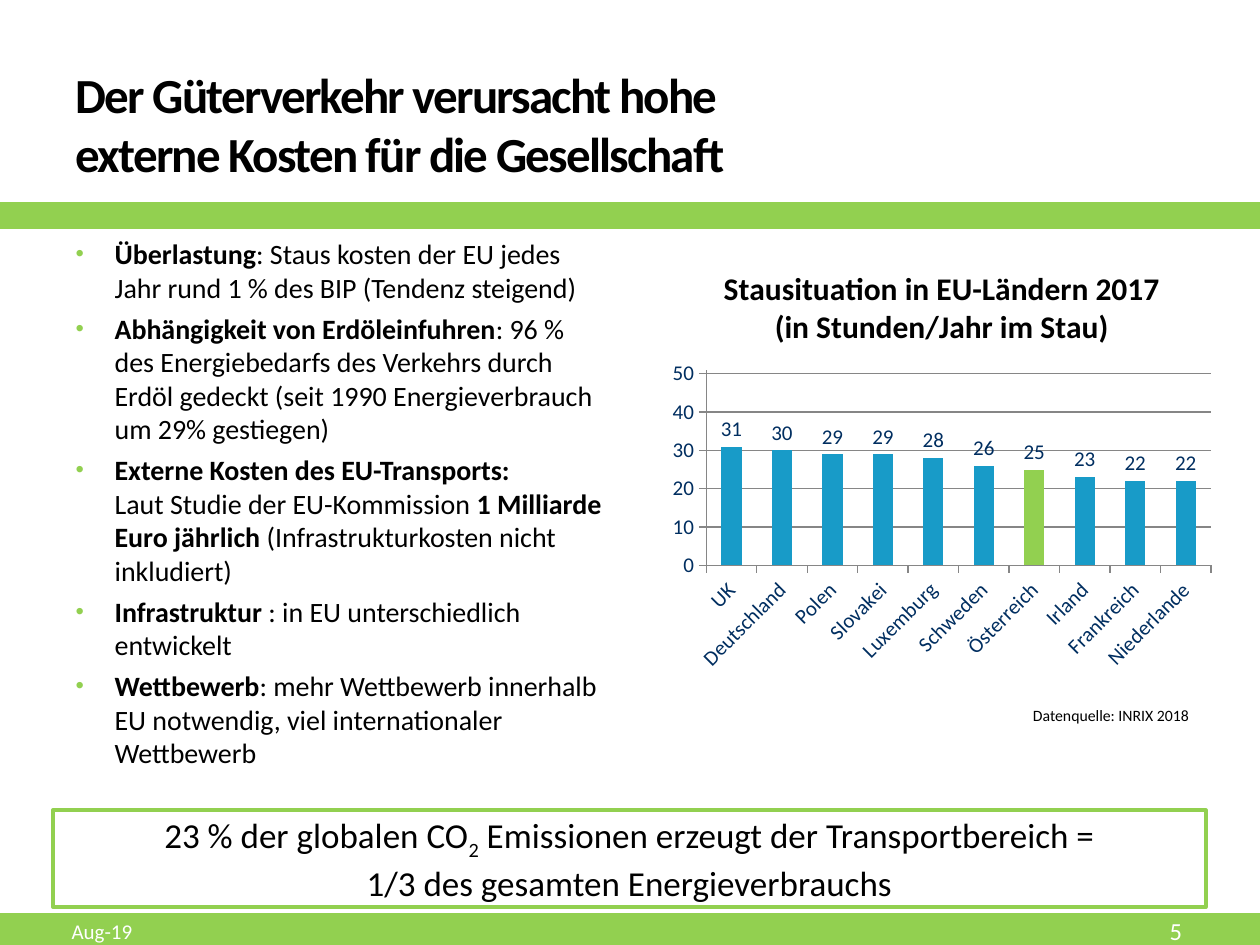
import pptx
import pptx.chart.data
import pptx.dml.color
import pptx.enum.chart
import pptx.enum.shapes
import pptx.enum.text
import pptx.oxml
import pptx.oxml.ns
import pptx.util
from lxml import etree
from pptx.util import Inches

COLORS = {"green": "92D050", "blue": "189BC8", "navy": "002E60",
          "black": "000000", "white": "FFFFFF", "grid": "868686"}
FONT = "Calibri"
ALIGN = pptx.enum.text.PP_ALIGN
ANCHOR = pptx.enum.text.MSO_ANCHOR

BULLETS = [
    [("Überlastung", True),
     (": Staus kosten der EU jedes Jahr rund 1 % des BIP (Tendenz steigend)", False)],
    [("Abhängigkeit von Erdöleinfuhren", True),
     (": 96 % des Energiebedarfs des Verkehrs durch Erdöl gedeckt "
      "(seit 1990 Energieverbrauch um 29% gestiegen)", False)],
    [("Externe Kosten des EU-Transports:", True), None,
     ("Laut Studie der EU-Kommission ", False), ("1 Milliarde Euro jährlich", True),
     (" (Infrastrukturkosten nicht inkludiert)", False)],
    [("Infrastruktur", True), (" : in EU unterschiedlich entwickelt", False)],
    [("Wettbewerb", True),
     (": mehr Wettbewerb innerhalb EU notwendig, viel internationaler Wettbewerb", False)],
]
CONGESTION_HOURS = {
    "UK": 31, "Deutschland": 30, "Polen": 29, "Slovakei": 29, "Luxemburg": 28,
    "Schweden": 26, "Österreich": 25, "Irland": 23, "Frankreich": 22, "Niederlande": 22}


def rgb(name):
    return pptx.dml.color.RGBColor.from_string(COLORS[name])


def style_font(font, size, color="black", bold=None):
    font.name = FONT
    font.size = pptx.util.Pt(size)
    font.color.rgb = rgb(color)
    font.bold = bold


def place(shape, left, top, width, height):
    shape.left, shape.top = Inches(left), Inches(top)
    shape.width, shape.height = Inches(width), Inches(height)


def add_bar(slide, left, top, width, height, fill="green", line="green"):
    """Add a flat rectangle with a thin outline."""
    bar = slide.shapes.add_shape(
        pptx.enum.shapes.MSO_SHAPE.RECTANGLE,
        Inches(left), Inches(top), Inches(width), Inches(height))
    bar.shadow.inherit = False
    bar.fill.solid()
    bar.fill.fore_color.rgb = rgb(fill)
    bar.line.color.rgb = rgb(line)
    bar.line.width = pptx.util.Pt(2.08)
    return bar


def add_label(slide, left, top, width, height, text, size, color,
              align=ALIGN.LEFT, anchor=ANCHOR.MIDDLE):
    label = slide.shapes.add_textbox(
        Inches(left), Inches(top), Inches(width), Inches(height))
    frame = label.text_frame
    frame.word_wrap = True
    frame.vertical_anchor = anchor
    paragraph = frame.paragraphs[0]
    paragraph.text = text
    paragraph.alignment = align
    style_font(paragraph.font, size, color)


def fill_title(title, left, top, width, height):
    place(title, left, top, width, height)
    frame = title.text_frame
    frame.auto_size = pptx.enum.text.MSO_AUTO_SIZE.NONE
    frame.vertical_anchor = ANCHOR.MIDDLE
    paragraph = frame.paragraphs[0]
    paragraph.alignment = ALIGN.LEFT
    run = paragraph.add_run()
    run.text = "Der Güterverkehr verursacht hohe externe Kosten für die Gesellschaft"
    style_font(run.font, 28, bold=True)
    run.font._element.set("spc", "-100")


def add_bullet_mark(paragraph):
    properties = paragraph._p.get_or_add_pPr()
    properties.set("marL", str(Inches(0.31)))
    properties.set("indent", str(Inches(-0.31)))
    namespace = pptx.oxml.ns.nsdecls("a")
    for mark in (f'<a:buClr {namespace}><a:srgbClr val="{COLORS["green"]}"/></a:buClr>',
                 f'<a:buSzPct {namespace} val="85000"/>',
                 f'<a:buFont {namespace} typeface="Arial"/>',
                 f'<a:buChar {namespace} char="•"/>'):
        properties.append(pptx.oxml.parse_xml(mark))


def fill_bullets(body, left, top, width, height):
    place(body, left, top, width, height)
    frame = body.text_frame
    frame.auto_size = pptx.enum.text.MSO_AUTO_SIZE.NONE
    for index, parts in enumerate(BULLETS):
        paragraph = frame.add_paragraph() if index else frame.paragraphs[0]
        add_bullet_mark(paragraph)
        paragraph.space_before = pptx.util.Pt(4.1 if index else 0)
        style_font(paragraph.font, 16)
        for part in parts:
            if part is None:
                paragraph.add_line_break()
                continue
            run = paragraph.add_run()
            run.text, run.font.bold = part


def set_plot_layout(chart, **fractions):
    """Fix the inner plot area as fractions of the chart."""
    plot_area = chart._chartSpace.chart.plotArea
    for old in plot_area.findall(pptx.oxml.ns.qn("c:layout")):
        plot_area.remove(old)
    layout = etree.Element(pptx.oxml.ns.qn("c:layout"))
    manual = etree.SubElement(layout, pptx.oxml.ns.qn("c:manualLayout"))
    settings = {"layoutTarget": "inner", "xMode": "edge", "yMode": "edge", **fractions}
    for tag, value in settings.items():
        etree.SubElement(manual, pptx.oxml.ns.qn(f"c:{tag}")).set("val", str(value))
    plot_area.insert(0, layout)


def add_congestion_chart(slide, left, top, width, height):
    hours = pptx.chart.data.CategoryChartData()
    hours.categories = list(CONGESTION_HOURS)
    hours.add_series("Series 1", list(CONGESTION_HOURS.values()))
    chart = slide.shapes.add_chart(
        pptx.enum.chart.XL_CHART_TYPE.COLUMN_CLUSTERED,
        Inches(left), Inches(top), Inches(width), Inches(height), hours).chart
    style_font(chart.font, 18)
    chart.has_legend = False
    chart.has_title = True
    heading = chart.chart_title.text_frame.paragraphs[0]
    heading.text = "Stausituation in EU-Ländern 2017\v(in Stunden/Jahr im Stau)"
    style_font(heading.font, 18, bold=True)
    chart.chart_title.include_in_layout = False
    set_plot_layout(chart, x=0.08, y=0.28, w=0.9, h=0.45)

    for axis in (chart.category_axis, chart.value_axis):
        style_font(axis.tick_labels.font, 12, "navy")
        axis.major_tick_mark = pptx.enum.chart.XL_TICK_MARK.OUTSIDE
        axis.format.line.color.rgb = rgb("grid")
    chart.category_axis.tick_labels.font._element.getparent().getparent().getparent().find(
        pptx.oxml.ns.qn("a:bodyPr")).set("rot", "-2700000")
    hours_axis = chart.value_axis
    hours_axis.minimum_scale, hours_axis.maximum_scale = 0, 51
    hours_axis.major_unit = 10
    hours_axis.has_major_gridlines = True
    hours_axis.major_gridlines.format.line.color.rgb = rgb("grid")

    plot = chart.plots[0]
    plot.vary_by_categories = False
    plot.gap_width = 150
    columns = plot.series[0]
    austria = columns.points[list(CONGESTION_HOURS).index("Österreich")]
    for part, color in ((columns, "blue"), (austria, "green")):
        part.format.fill.solid()
        part.format.fill.fore_color.rgb = rgb(color)
    labels = columns.data_labels
    labels.show_value = True
    labels.position = pptx.enum.chart.XL_LABEL_POSITION.OUTSIDE_END
    style_font(labels.font, 12, "navy")


def add_emissions_box(slide, left, top, width, height):
    box = add_bar(slide, left, top, width, height, fill="white")
    frame = box.text_frame
    frame.word_wrap = True
    frame.vertical_anchor = ANCHOR.MIDDLE
    emissions, energy = frame.paragraphs[0], frame.add_paragraph()
    for text in ("23 % der globalen CO", "2", " Emissionen erzeugt der Transportbereich ="):
        run = emissions.add_run()
        run.text = text
        if text == "2":
            run.font._element.set("baseline", "-25000")
    energy.text = "1/3 des gesamten Energieverbrauchs"
    for paragraph in (emissions, energy):
        paragraph.alignment = ALIGN.CENTER
        for run in paragraph.runs:
            style_font(run.font, 20)


def add_footer(slide, top):
    add_bar(slide, 0, top, 10, 7.5 - top)
    add_label(slide, 8.31, top - 0.05, 1.17, 0.36, "5", 14, "white", ALIGN.RIGHT)
    add_label(slide, 0.47, top - 0.05, 3.17, 0.36, "Aug-19", 12, "white")


def main():
    deck = pptx.Presentation()
    deck.slide_width, deck.slide_height = Inches(10), Inches(7.5)
    slide = deck.slides.add_slide(deck.slide_layouts[1])
    add_bar(slide, 0, 1.62, 10, 0.18)
    fill_title(slide.shapes.title, 0.5, 0.44, 6.15, 1.08)
    fill_bullets(slide.placeholders[1], 0.5, 1.83, 4.42, 5.16)
    add_congestion_chart(slide, 5.25, 1.97, 4.45, 3.45)
    add_footer(slide, 7.26)
    add_emissions_box(slide, 0.42, 6.43, 9.15, 0.77)
    add_label(slide, 8.1, 5.55, 1.57, 0.25, "Datenquelle: INRIX 2018", 9, "black",
              anchor=ANCHOR.TOP)
    deck.save("out.pptx")


if __name__ == "__main__":
    main()
